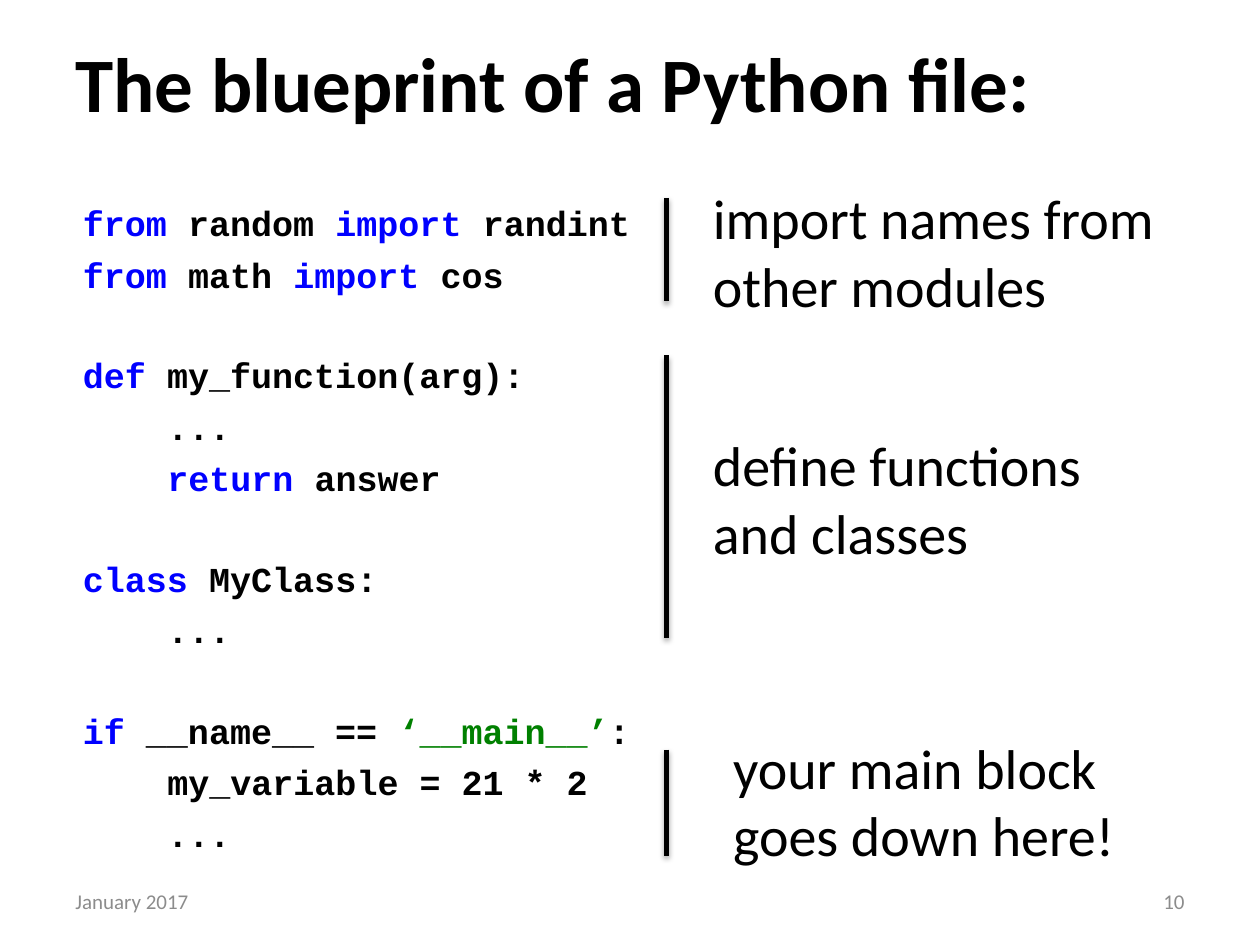
from dataclasses import dataclass

from lxml.etree import SubElement as Sub
from pptx import Presentation
from pptx.dml.color import RGBColor
from pptx.enum.shapes import MSO_CONNECTOR as Conn
from pptx.enum.text import MSO_ANCHOR as Anchor, MSO_AUTO_SIZE as Fit, PP_ALIGN as Align
from pptx.oxml.ns import qn
from pptx.util import Inches, Pt

BLACK = RGBColor(0, 0, 0)
BLUE = RGBColor(0, 0, 255)
GREEN = RGBColor(0, 128, 0)
GREY = RGBColor(0x8C, 0x8C, 0x8C)

BODY = {"name": "Calibri", "size": Pt(32), "bold": False}
HEAD = {"name": "Calibri", "size": Pt(44), "bold": True}
FOOT = {"name": "Calibri", "size": Pt(12), "bold": False}
CODE = {"name": "Courier New", "size": Pt(20), "bold": True}

PITCH = 28.05
SPACE = 5.4
MARGIN = 0.06
TAB = 0.67
BAR_X = 5.29


@dataclass
class Line:
    words: list[tuple[str, RGBColor]]
    depth: int = 0


@dataclass
class Label:
    text: str
    left: float
    top: float
    width: float
    height: float
    font: dict
    color: RGBColor = BLACK
    align: Align = Align.LEFT
    anchor: Anchor = Anchor.TOP


@dataclass
class Bar:
    top: float
    end: float


BLOCKS = [
    [
        Line([("from", BLUE), (" random ", BLACK), ("import ", BLUE), ("randint", BLACK)]),
        Line([("from", BLUE), (" math ", BLACK), ("import ", BLUE), ("cos", BLACK)]),
    ],
    [
        Line([("def ", BLUE), ("my_function(arg):", BLACK)]),
        Line([("...", BLACK)], 1),
        Line([("return", BLUE), (" answer", BLACK)], 1),
    ],
    [
        Line([("class ", BLUE), ("MyClass:", BLACK)]),
        Line([("...", BLACK)], 1),
    ],
    [
        Line([("if", BLUE), (" __name__ == ", BLACK), ("‘__main__’", GREEN), (":", BLACK)]),
        Line([("my_variable = 21 * 2", BLACK)], 1),
        Line([("...", BLACK)], 1),
    ],
]

LABELS = [
    Label("January 2017", 0.5, 6.95, 2.33, 0.4, FOOT, GREY, anchor=Anchor.MIDDLE),
    Label("10", 7.17, 6.95, 2.33, 0.4, FOOT, GREY, Align.RIGHT, Anchor.MIDDLE),
    Label("import names from other modules", 5.56, 1.41, 3.94, 1.18, BODY),
    Label("define functions and classes", 5.56, 3.37, 3.63, 1.18, BODY),
    Label("your main block goes down here!", 5.72, 5.77, 3.67, 1.18, BODY),
]

BARS = [Bar(1.57, 2.39), Bar(2.82, 5.06), Bar(5.95, 6.79)]


def write(para, text: str, font: dict, color: RGBColor) -> None:
    run = para.add_run()
    run.text = text
    for key, value in font.items():
        setattr(run.font, key, value)
    run.font.color.rgb = color


def add_box(slide, left: float, top: float, width: float, height: float):
    box = slide.shapes.add_textbox(Inches(left), Inches(top), Inches(width), Inches(height))
    box.text_frame.word_wrap = True
    return box.text_frame


def add_title(slide, text: str) -> None:
    title = slide.shapes.title
    place = {"left": 0.5, "top": 0.02, "width": 9, "height": 1.25}
    for key, value in place.items():
        setattr(title, key, Inches(value))
    frame = title.text_frame
    frame.auto_size = Fit.NONE
    frame.vertical_anchor = Anchor.MIDDLE
    para = frame.paragraphs[0]
    para.alignment = Align.LEFT
    write(para, text, HEAD, BLACK)


def add_label(slide, label: Label) -> None:
    frame = add_box(slide, label.left, label.top, label.width, label.height)
    frame.vertical_anchor = label.anchor
    para = frame.paragraphs[0]
    para.alignment = label.align
    write(para, label.text, label.font, label.color)


def add_code(slide, blocks: list[list[Line]]) -> None:
    frame = add_box(slide, 0.5, 1.11, 9, 4.84)
    frame.margin_top = Inches(0.49)
    para = frame.paragraphs[0]
    for b, block in enumerate(blocks):
        for n, line in enumerate(block):
            if b or n:
                para = frame.add_paragraph()
                para.space_before = Pt(SPACE if n else SPACE + PITCH)
            props = para._p.get_or_add_pPr()
            props.set("marL", str(Inches(MARGIN + TAB * line.depth)))
            props.set("indent", "0")
            for text, color in line.words:
                write(para, text, CODE, color)


def add_bar(slide, bar: Bar) -> None:
    x = Inches(BAR_X)
    line = slide.shapes.add_connector(Conn.STRAIGHT, x, Inches(bar.top), x, Inches(bar.end))
    line.line.color.rgb = BLACK
    line.line.width = Pt(3)
    effects = Sub(line._element.spPr, qn("a:effectLst"))
    shade = Sub(effects, qn("a:outerShdw"), blurRad=str(Pt(3.1)), dist=str(Pt(1.8)),
                dir="5400000", rotWithShape="0")
    color = Sub(shade, qn("a:srgbClr"), val=str(BLACK))
    Sub(color, qn("a:alpha"), val="35000")


def main() -> None:
    deck = Presentation()
    deck.slide_width = Inches(10)
    deck.slide_height = Inches(7.5)
    slide = deck.slides.add_slide(deck.slide_layouts[5])
    add_title(slide, "The blueprint of a Python file:")
    add_code(slide, BLOCKS)
    for bar in BARS:
        add_bar(slide, bar)
    for label in LABELS:
        add_label(slide, label)
    deck.save("out.pptx")


if __name__ == "__main__":
    main()
